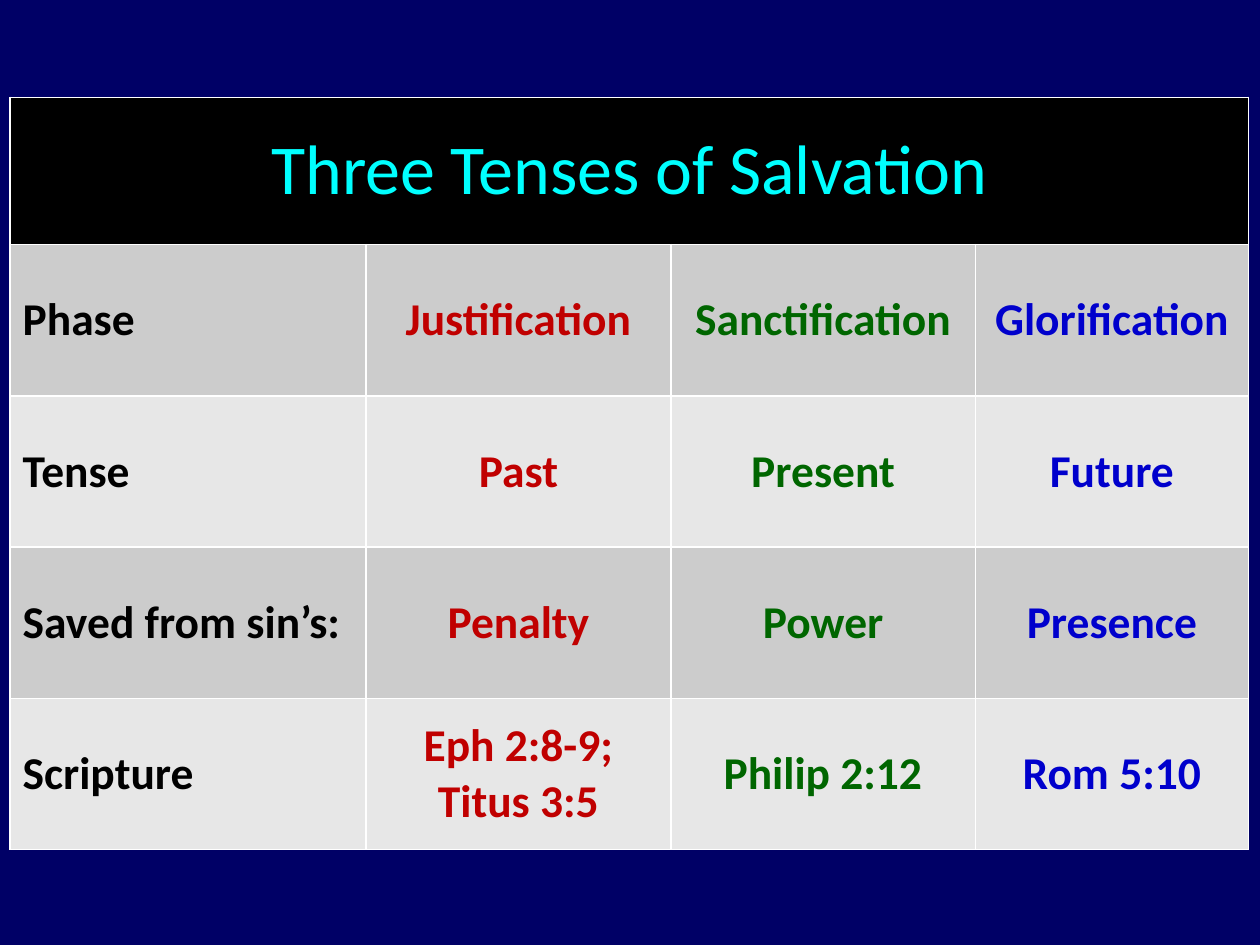
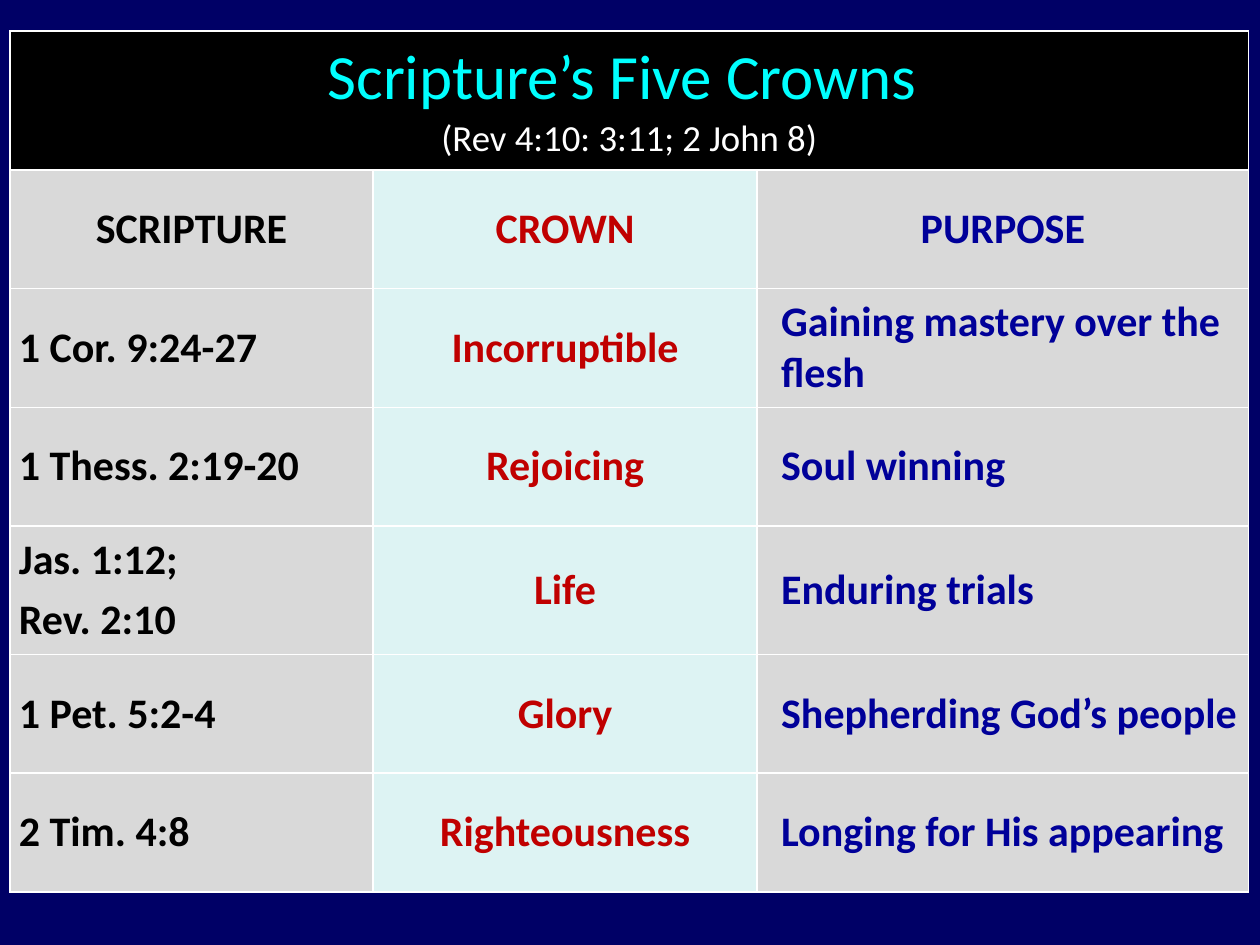
from lxml.etree import SubElement
from pptx import Presentation
from pptx.dml.color import RGBColor
from pptx.enum.text import MSO_ANCHOR, PP_ALIGN
from pptx.oxml.ns import qn
from pptx.util import Emu, Inches, Pt

SLIDE_WIDTH, SLIDE_HEIGHT = Inches(10), Inches(7.5)
TABLE_LEFT, TABLE_WIDTH = 0.008, 0.983
FONT = "Calibri"
COLORS = {
    "background": "000066", "header": "000000", "title": "00FFFF",
    "white": "FFFFFF", "black": "000000", "red": "C00000",
    "green": "006600", "blue": "0000CC", "navy": "000099",
    "band_dark": "CCCCCC", "band_light": "E7E7E7",
    "gray": "D9D9D9", "aqua": "DDF3F3",
}
TENSES = [
    ["Phase", "Justification", "Sanctification", "Glorification"],
    ["Tense", "Past", "Present", "Future"],
    ["Saved from sin’s:", "Penalty", "Power", "Presence"],
    ["Scripture", "Eph 2:8-9; Titus 3:5", "Philip 2:12", "Rom 5:10"],
]
CROWNS = [
    ["SCRIPTURE", "CROWN", "PURPOSE"],
    ["1 Cor. 9:24-27", "Incorruptible", "Gaining mastery over the flesh"],
    ["1 Thess. 2:19-20", "Rejoicing", "Soul winning"],
    ["Jas. 1:12;\nRev. 2:10", "Life", "Enduring trials"],
    ["1 Pet. 5:2-4", "Glory", "Shepherding God’s people"],
    ["2 Tim. 4:8", "Righteousness", "Longing for His appearing"],
]


def color(name):
    """Return the named colour."""
    return RGBColor.from_string(COLORS[name])


def add_run(paragraph, text, size, color_name, bold=False):
    """Append a formatted run to a paragraph."""
    run = paragraph.add_run()
    run.text = text
    run.font.name = FONT
    run.font.size = Pt(size)
    run.font.bold = bold
    run.font.color.rgb = color(color_name)


def write_text(cell, text, *, size, color_name, bold=False, centered=False,
               spacing=0, indent=0):
    """Write one paragraph per line of text and return the last paragraph."""
    frame = cell.text_frame
    for index, line in enumerate(text.split("\n")):
        paragraph = frame.add_paragraph() if index else frame.paragraphs[0]
        paragraph.alignment = PP_ALIGN.CENTER if centered else PP_ALIGN.LEFT
        paragraph.space_before = Pt(round(spacing * size))
        if indent:
            properties = paragraph._p.get_or_add_pPr()
            properties.set("marL", str(Inches(indent)))
            properties.set("indent", "0")
        add_run(paragraph, line, size, color_name, bold)
    return paragraph


def style_cell(cell, fill, margins):
    """Give a cell white borders, a fill, margins and a middle anchor."""
    properties = cell._tc.get_or_add_tcPr()
    for side in ("lnL", "lnR", "lnT", "lnB"):
        line = SubElement(properties, qn(f"a:{side}"), w=str(Pt(1)))
        solid = SubElement(line, qn("a:solidFill"))
        SubElement(solid, qn("a:srgbClr"), val=COLORS["white"])
    cell.fill.solid()
    cell.fill.fore_color.rgb = color(fill)
    cell.margin_left = cell.margin_right = Inches(margins[0])
    cell.margin_top = cell.margin_bottom = Inches(margins[1])
    cell.vertical_anchor = MSO_ANCHOR.MIDDLE


def share_out(items, attribute, total, weights):
    """Divide a total length among rows or columns by weight."""
    for item, weight in zip(items, weights):
        setattr(item, attribute, Emu(round(total * weight / sum(weights))))


def add_slide(presentation):
    """Add an empty slide with the shared background."""
    slide = presentation.slides.add_slide(presentation.slide_layouts[6])
    slide.background.fill.solid()
    slide.background.fill.fore_color.rgb = color("background")
    return slide


def add_titled_table(slide, top, height, columns, rows, fill_of, margins):
    """Add a table with a merged black header and return it."""
    width, height = round(SLIDE_WIDTH * TABLE_WIDTH), round(SLIDE_HEIGHT * height)
    frame = slide.shapes.add_table(
        len(rows), len(columns), round(SLIDE_WIDTH * TABLE_LEFT),
        round(SLIDE_HEIGHT * top), width, height)
    table = frame.table
    table.first_row = table.horz_banding = False
    share_out(table.columns, "width", width, columns)
    share_out(table.rows, "height", height, rows)
    for row in range(len(rows)):
        for column in range(len(columns)):
            fill = fill_of(row, column) if row else "header"
            style_cell(table.cell(row, column), fill, margins)
    table.cell(0, 0).merge(table.cell(0, len(columns) - 1))
    return table


def fill_body(table, content, format_of):
    """Write the content below the header, formatted by row and column."""
    for row, texts in enumerate(content, start=1):
        for column, text in enumerate(texts):
            write_text(table.cell(row, column), text, bold=True,
                       **format_of(row, column))


def build_tenses(presentation):
    """Build the slide on the three tenses of salvation."""
    table = add_titled_table(
        add_slide(presentation), 0.103, 0.796, [2.83, 2.42, 2.42, 2.17],
        [1.17] + [1.2] * len(TENSES),
        lambda row, column: "band_dark" if row % 2 else "band_light", (0.1, 0.05))
    write_text(table.cell(0, 0), "Three Tenses of Salvation", size=40,
               color_name="title", centered=True, spacing=0.2)
    inks = ["black", "red", "green", "blue"]
    fill_body(table, TENSES, lambda row, column: {
        "size": 26, "color_name": inks[column], "centered": column > 0})


def build_crowns(presentation):
    """Build the slide on the five crowns."""
    table = add_titled_table(
        add_slide(presentation), 0.033, 0.911, [2.88, 3.05, 3.9],
        [1.1, 0.94, 0.94, 0.94, 1.02, 0.94, 0.94],
        lambda row, column: "aqua" if column == 1 else "gray", (0.07, 0.04))
    title = write_text(table.cell(0, 0), "Scripture’s Five Crowns ", size=36,
                       color_name="title", centered=True, spacing=0.2)
    title.add_line_break()
    add_run(title, "(Rev 4:10: 3:11; 2 John 8)", 21, "white")
    inks = ["black", "red", "navy"]
    fill_body(table, CROWNS, lambda row, column: {
        "size": 24, "color_name": inks[column], "spacing": 0.2,
        "centered": row == 1 or column == 1,
        "indent": 0.12 if row > 1 and column == 2 else 0})


def main():
    """Build and save the presentation."""
    presentation = Presentation()
    presentation.slide_width = SLIDE_WIDTH
    presentation.slide_height = SLIDE_HEIGHT
    build_tenses(presentation)
    build_crowns(presentation)
    presentation.save("out.pptx")


if __name__ == "__main__":
    main()
